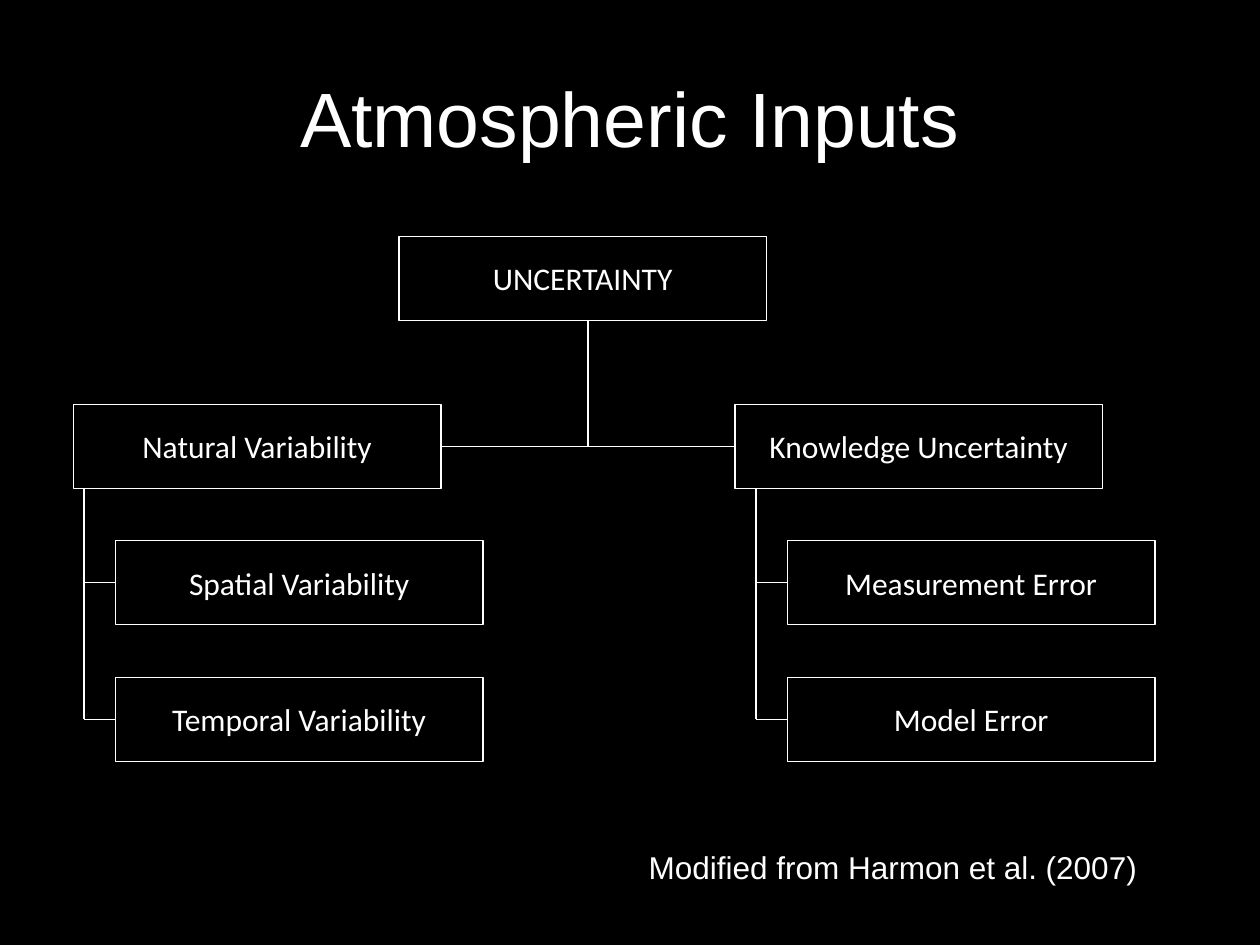
from pptx import Presentation
from pptx.dml.color import RGBColor
from pptx.enum.shapes import MSO_CONNECTOR as Conn, MSO_SHAPE as Kind
from pptx.enum.text import MSO_ANCHOR as Anchor, PP_ALIGN as Align
from pptx.oxml.ns import qn
from pptx.util import Pt
from lxml.etree import SubElement

BLACK = RGBColor(0, 0, 0)
WHITE = RGBColor(255, 255, 255)
WIDE, HIGH = 210, 48

deck = Presentation()
deck.slide_width, deck.slide_height = Pt(720), Pt(540)
slide = deck.slides.add_slide(deck.slide_layouts[6])
slide.background.fill.solid()
slide.background.fill.fore_color.rgb = BLACK


def write(text, x, y, w, h, size=18, font="Arial", align=Align.CENTER,
          anchor=Anchor.MIDDLE, wrap=False, boxed=False):
    """Add text, plain or inside an outlined process box."""
    area = Pt(x), Pt(y), Pt(w), Pt(h)
    if boxed:
        shape = slide.shapes.add_shape(Kind.FLOWCHART_PROCESS, *area)
        shape.shadow.inherit = False
        shape.fill.background()
        shape.line.color.rgb = WHITE
        shape.line.width = Pt(0.75)
    else:
        shape = slide.shapes.add_textbox(*area)
    frame = shape.text_frame
    frame.word_wrap = wrap
    frame.vertical_anchor = anchor
    par = frame.paragraphs[0]
    par.alignment = align
    run = par.add_run()
    run.text = text
    run.font.size = Pt(size)
    run.font.name = font
    run.font.color.rgb = WHITE


def link(x1, y1, x2, y2):
    """Add a thin white line without a shadow."""
    line = slide.shapes.add_connector(
        Conn.STRAIGHT, Pt(x1), Pt(y1), Pt(x2), Pt(y2))
    line.line.color.rgb = WHITE
    line.line.width = Pt(0.75)
    SubElement(line._element.spPr, qn("a:effectLst"))


# Title and source
write("Atmospheric Inputs", 36, 21.6, 648, 90, size=44, wrap=True)
write("Modified from Harmon et al. (2007)", 363.6, 481, 296.6, 28.8,
      align=Align.LEFT, anchor=Anchor.TOP)

# Root box, its stem and the bar between the branches
root, top, step = 135, 231, 78
mid = top + HIGH / 2
write("UNCERTAINTY", 228, root, WIDE, HIGH, font="Calibri", boxed=True)
link(336, root + HIGH, 336, mid)
link(42 + WIDE, mid, 420, mid)

# Branches: head, its left edge, trunk, left edge of the parts, parts
trees = [
    ("Natural Variability", 42, 48, 66,
     ["Spatial Variability", "Temporal Variability"]),
    ("Knowledge Uncertainty", 420, 432, 450,
     ["Measurement Error", "Model Error"]),
]
for head, left, trunk, inner, parts in trees:
    write(head, left, top, WIDE, HIGH, font="Calibri", boxed=True)
    link(trunk, top + HIGH, trunk, mid + step * len(parts))
    for row, part in enumerate(parts, 1):
        write(part, inner, top + step * row, WIDE, HIGH,
              font="Calibri", boxed=True)
        link(trunk, mid + step * row, inner, mid + step * row)

deck.save("out.pptx")
